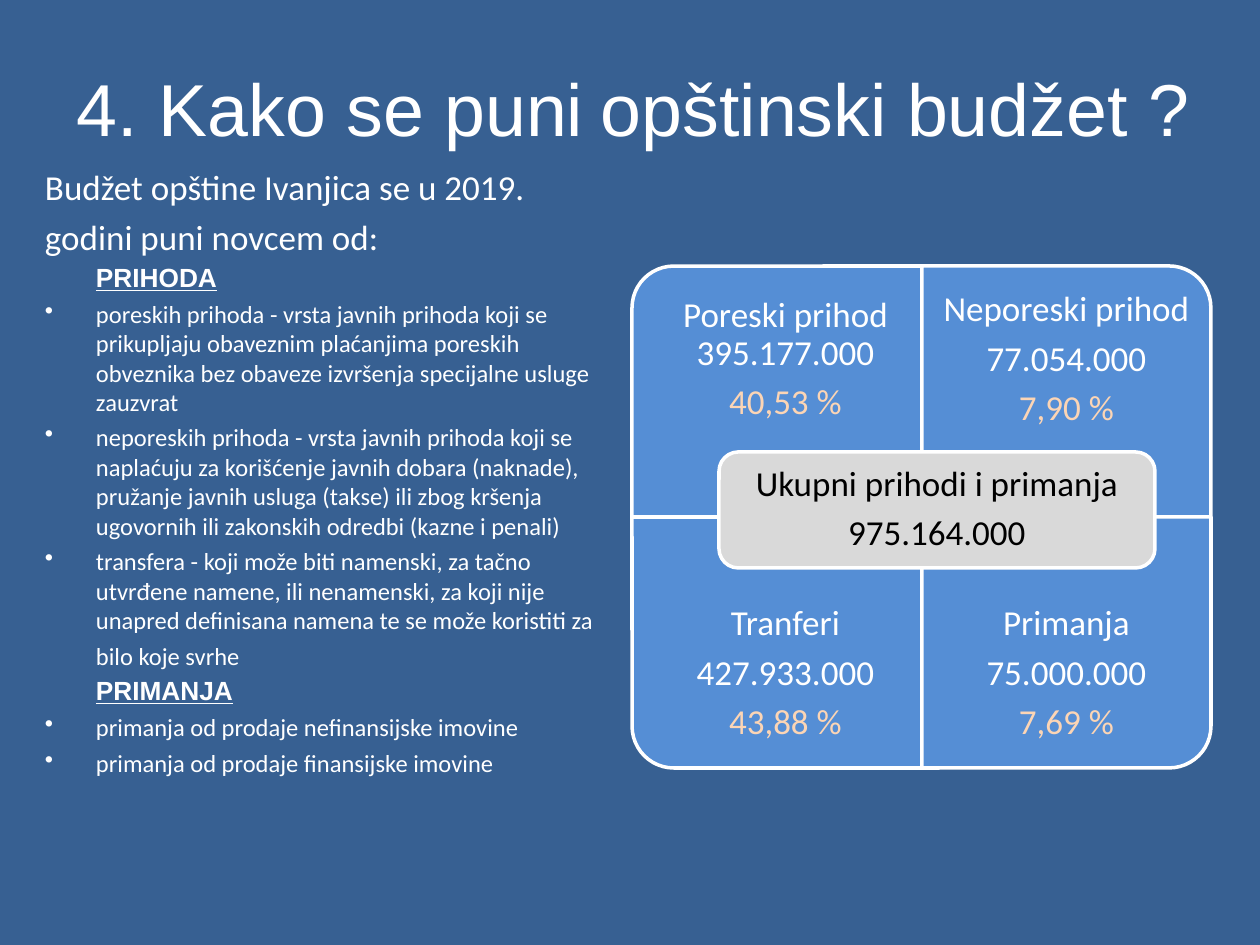
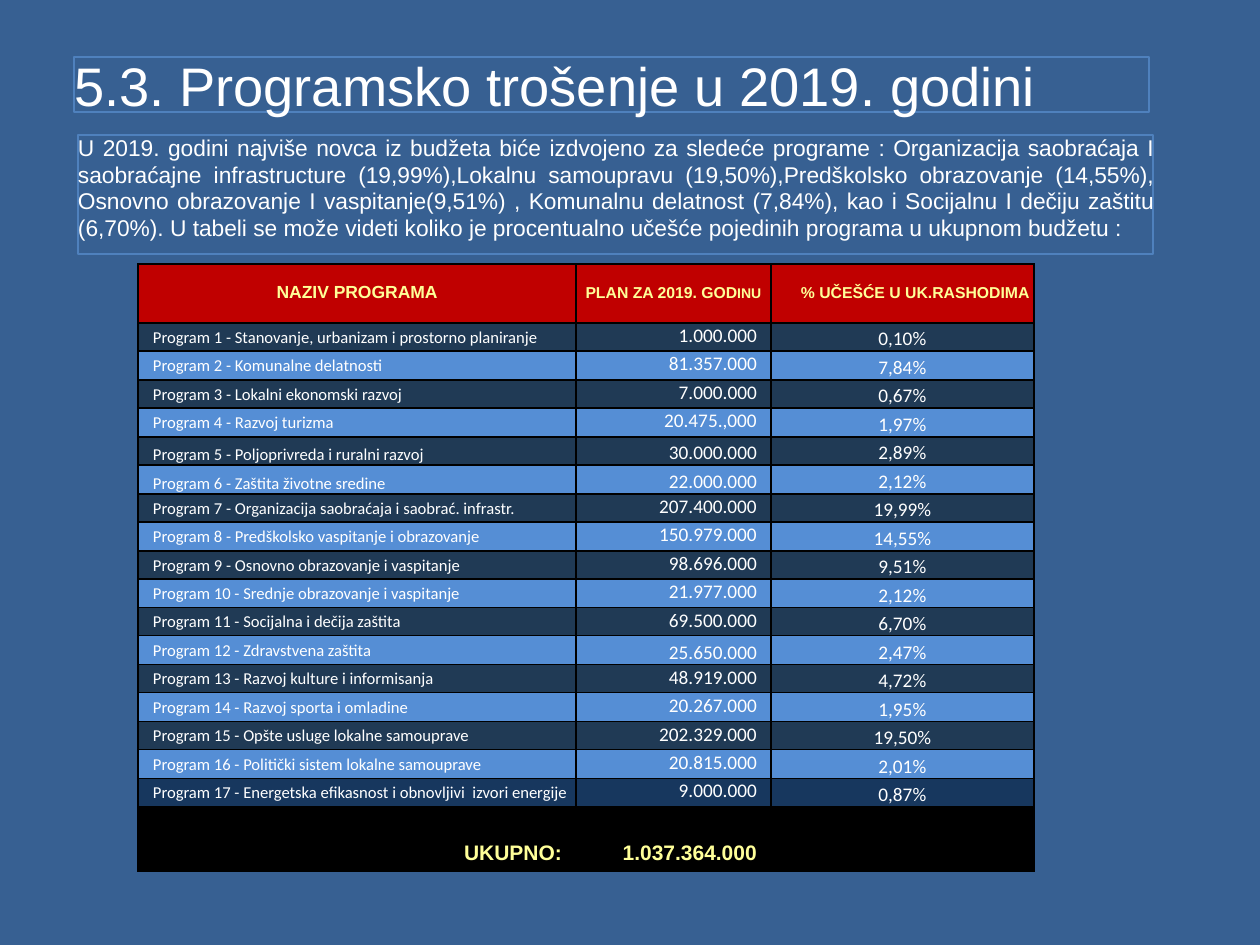
from dataclasses import dataclass, replace

from lxml.etree import SubElement
from pptx import Presentation
from pptx.dml.color import RGBColor as RGB
from pptx.enum.shapes import MSO_SHAPE as SHAPE
from pptx.enum.text import MSO_ANCHOR as ANCHOR, PP_ALIGN as ALIGN
from pptx.oxml.ns import qn
from pptx.util import Emu, Pt

PX_PER_INCH = 126


def px(n):
    return Emu(round(n * 914400 / PX_PER_INCH))


# ---- Theme: colours and type styles ----
@dataclass(frozen=True)
class Style:
    size: float
    color: str = "FFFFFF"
    font: str = "Calibri"
    bold: bool = False
    underline: bool = False
    line: object = None      # Pt value, or a share of single spacing
    after: float = 0
    align: object = ALIGN.LEFT
    left: int = 0
    hang: int = 0
    bullet: bool = False


class Theme:
    BACK, FRAME = "376092", "4F81BD"
    BLUE, DARK, NAVY = "558ED5", "203A55", "17375E"
    WHITE, BLACK, GREY = "FFFFFF", "000000", "D9D9D9"
    RED, YELLOW, PEACH = "C00000", "FFFF99", "FCD5B5"

    TITLE = Style(42, font="Arial", line=Pt(46.9), after=3.5)
    TITLE_SMALL = Style(31, font="Arial", line=Pt(34.6))
    LEAD = Style(20, line=Pt(28.6), after=3.5)
    HEADING = Style(15, font="Arial", bold=True, underline=True,
                    line=Pt(16.7), after=3.5, left=51)
    BULLET = Style(14, line=Pt(16.8), after=3.5, left=51, hang=51, bullet=True)
    BULLET_LOOSE = replace(BULLET, line=Pt(17.1))
    BULLET_TAIL = replace(BULLET_LOOSE, hang=0, bullet=False)
    INTRO = Style(13, font="Arial", line=Pt(15.1), align=ALIGN.JUSTIFY)
    FIGURE = Style(20, line=0.9, after=6.6, align=ALIGN.CENTER)
    SHARE = replace(FIGURE, color=PEACH)
    TOTAL = replace(FIGURE, color=BLACK)

    HEAD = Style(10, YELLOW, "Arial", True, line=Pt(9.5), align=ALIGN.CENTER)
    HEAD_SMALL = replace(HEAD, size=9)
    HEAD_TINY = replace(HEAD, size=8)
    NAME = Style(9.5, line=Pt(12.2))
    AMOUNT = Style(11, line=Pt(12.2), align=ALIGN.RIGHT)
    PERCENT = Style(11, align=ALIGN.CENTER)
    SUM = Style(12, YELLOW, "Arial", True, line=Pt(13.4), align=ALIGN.RIGHT)


T = Theme


# ---- Text ----
def add_run(p, text, style):
    r = p.add_run()
    r.text = text
    f = r.font
    f.size, f.name = Pt(style.size), style.font
    f.bold, f.underline = style.bold, style.underline
    f.color.rgb = RGB.from_string(style.color)


def format_para(p, style):
    p.alignment = style.align
    p.line_spacing = style.line
    p.space_after = Pt(style.after)
    pPr = p._p.get_or_add_pPr()
    pPr.set("marL", str(px(style.left)))
    pPr.set("indent", str(-px(style.hang)))
    if style.bullet:
        SubElement(pPr, qn("a:buChar")).set("char", "•")


def write(tf, paras):
    """Fill a text frame; each paragraph is a list of (text, style) runs."""
    for i, runs in enumerate(paras):
        p = tf.paragraphs[0] if i == 0 else tf.add_paragraph()
        format_para(p, runs[0][1])
        for text, style in runs:
            add_run(p, text, style)


def set_frame(tf, inset=0, anchor=ANCHOR.TOP, wrap=True):
    tf.word_wrap = wrap
    tf.vertical_anchor = anchor
    tf.margin_left = tf.margin_right = px(inset)
    tf.margin_top = tf.margin_bottom = px(inset)


# ---- Shapes ----
def add_block(slide, kind, box, fill, line=None, weight=2):
    sp = slide.shapes.add_shape(kind, *map(px, box))
    sp.shadow.inherit = False
    sp.fill.solid()
    sp.fill.fore_color.rgb = RGB.from_string(fill)
    if line:
        sp.line.color.rgb = RGB.from_string(line)
        sp.line.width = Pt(weight)
    else:
        sp.line.fill.background()
    return sp


def add_panel(slide, box, paras, line=None, wrap=True):
    sp = add_block(slide, SHAPE.RECTANGLE, box, T.BACK, line, 0.75)
    set_frame(sp.text_frame, wrap=wrap)
    write(sp.text_frame, paras)


def add_quadrant(slide, x, y, w, h, turn, text_y, lines):
    """A box with one round corner, turned so that the corner faces out."""
    fw, fh = (h, w) if turn % 180 else (w, h)
    frame = (x + (w - fw) / 2, y + (h - fh) / 2, fw, fh)
    sp = add_block(slide, SHAPE.ROUND_1_RECTANGLE, frame, T.BLUE, T.WHITE)
    sp.rotation = turn
    tb = slide.shapes.add_textbox(px(x), px(text_y), px(w), px(188))
    set_frame(tb.text_frame, 20, ANCHOR.MIDDLE)
    *figures, share = lines
    write(tb.text_frame, [[(t, T.FIGURE)] for t in figures] + [[(share, T.SHARE)]])


# ---- Table ----
def fill_cell(cell, fill, runs=(), anchor=ANCHOR.MIDDLE, left=0, right=0):
    tcPr = cell._tc.get_or_add_tcPr()
    for side in ("lnL", "lnR", "lnT", "lnB"):
        ln = SubElement(tcPr, qn(f"a:{side}"), w=str(Pt(1)))
        SubElement(SubElement(ln, qn("a:solidFill")), qn("a:srgbClr"), val=T.BLACK)
    cell.fill.solid()
    cell.fill.fore_color.rgb = RGB.from_string(fill)
    cell.vertical_anchor = anchor
    cell.margin_left, cell.margin_right = px(left), px(right)
    cell.margin_top = cell.margin_bottom = 0
    if runs:
        write(cell.text_frame, [runs])
    else:
        SubElement(cell.text_frame.paragraphs[0]._p, qn("a:endParaRPr"), sz="800")


def add_grid(slide, x, y, widths, heights):
    tbl = slide.shapes.add_table(len(heights), len(widths), px(x), px(y),
                                 px(sum(widths)), px(sum(heights))).table
    tbl.first_row = tbl.horz_banding = False
    for col, w in zip(tbl.columns, widths):
        col.width = px(w)
    for row, h in zip(tbl.rows, heights):
        row.height = px(h)
    return tbl


# ---- Content ----
SOURCES = [
    [("4. Kako se puni", replace(T.TITLE, left=32))],
    [("Budžet opštine Ivanjica se u 2019. godini puni novcem od:", T.LEAD)],
    [("PRIHODA", T.HEADING)],
    [("poreskih prihoda - vrsta javnih prihoda koji se prikupljaju obaveznim "
      "plaćanjima poreskih obveznika bez obaveze izvršenja specijalne usluge "
      "zauzvrat", T.BULLET)],
    [("neporeskih prihoda - vrsta javnih prihoda koji se naplaćuju za korišćenje "
      "javnih dobara (naknade), pružanje javnih usluga (takse) ili zbog kršenja "
      "ugovornih ili zakonskih odredbi (kazne i penali)", T.BULLET)],
    [("transfera - koji može biti namenski, za tačno utvrđene namene, ili "
      "nenamenski, za koji nije unapred definisana namena te se može koristiti za",
      T.BULLET)],
    [("bilo koje svrhe", T.BULLET_TAIL)],
    [("PRIMANJA", T.HEADING)],
    [("primanja od prodaje nefinansijske imovine", T.BULLET_LOOSE)],
    [("primanja od prodaje finansijske imovine", T.BULLET_LOOSE)],
]

# Turn and lines of each quadrant, row by row
QUADRANTS = [
    (270, ["Poreski prihod 395.177.000", "40,53 %"]),
    (0, ["Neporeski prihod", "77.054.000", "7,90 %"]),
    (180, ["Tranferi", "427.933.000", "43,88 %"]),
    (90, ["Primanja", "75.000.000", "7,69 %"]),
]

INTRO = (
    "U 2019. godini najviše novca iz budžeta biće izdvojeno za sledeće programe : "
    "Organizacija saobraćaja I saobraćajne infrastructure (19,99%),Lokalnu "
    "samoupravu (19,50%),Predškolsko obrazovanje (14,55%), Osnovno obrazovanje I "
    "vaspitanje(9,51%) , Komunalnu delatnost (7,84%), kao i Socijalnu I dečiju "
    "zaštitu (6,70%). U tabeli se može videti koliko je procentualno učešće "
    "pojedinih programa u ukupnom budžetu :")

PROGRAMS = [
    ("Stanovanje, urbanizam i prostorno planiranje", "1.000.000", "0,10%"),
    ("Komunalne delatnosti", "81.357.000", "7,84%"),
    ("Lokalni ekonomski razvoj", "7.000.000", "0,67%"),
    ("Razvoj turizma", "20.475.,000", "1,97%"),
    ("Poljoprivreda i ruralni razvoj", "30.000.000", "2,89%"),
    ("Zaštita životne sredine", "22.000.000", "2,12%"),
    ("Organizacija saobraćaja i saobrać. infrastr.", "207.400.000", "19,99%"),
    ("Predškolsko vaspitanje i obrazovanje", "150.979.000", "14,55%"),
    ("Osnovno obrazovanje i vaspitanje", "98.696.000", "9,51%"),
    ("Srednje obrazovanje i vaspitanje", "21.977.000", "2,12%"),
    ("Socijalna i dečija zaštita", "69.500.000", "6,70%"),
    ("Zdravstvena zaštita", "25.650.000", "2,47%"),
    ("Razvoj kulture i informisanja", "48.919.000", "4,72%"),
    ("Razvoj sporta i omladine", "20.267.000", "1,95%"),
    ("Opšte usluge lokalne samouprave", "202.329.000", "19,50%"),
    ("Politički sistem lokalne samouprave", "20.815.000", "2,01%"),
    ("Energetska efikasnost i obnovljivi  izvori energije", "9.000.000", "0,87%"),
]
LOW_NAMES = {5, 6}          # programs whose name sits at the cell bottom
LOW_AMOUNTS = {5, 6, 12}


# ---- Slides ----
def add_slide(prs):
    slide = prs.slides.add_slide(prs.slide_layouts[6])
    slide.background.fill.solid()
    slide.background.fill.fore_color.rgb = RGB.from_string(T.BACK)
    return slide


def build_revenue(prs):
    slide = add_slide(prs)
    add_panel(slide, (45, 69, 559, 771), SOURCES)
    add_panel(slide, (601, 69, 552, 88), [[("opštinski budžet ?", T.TITLE)]],
              wrap=False)

    # Four revenue quadrants
    columns, rows = [(632, 307), (922, 289)], [(266, 266), (517, 580)]
    for i, (turn, lines) in enumerate(QUADRANTS):
        (x, w), (y, text_y) = columns[i % 2], rows[i // 2]
        add_quadrant(slide, x, y, w, 251, turn, text_y, lines)

    # Total in the middle
    total = add_block(slide, SHAPE.ROUNDED_RECTANGLE, (719, 452, 436, 116),
                      T.GREY, T.WHITE)
    set_frame(total.text_frame, 10, ANCHOR.MIDDLE)
    write(total.text_frame, [[("Ukupni prihodi i primanja", T.TOTAL)],
                             [("975.164.000", T.TOTAL)]])


def build_programs(prs):
    slide = add_slide(prs)
    add_panel(slide, (74, 57, 1075, 55),
              [[("5.3. Programsko trošenje u 2019. godini", T.TITLE_SMALL)]],
              T.FRAME, wrap=False)
    add_panel(slide, (78, 135, 1075, 119), [[(INTRO, T.INTRO)]], T.FRAME)

    count = len(PROGRAMS)
    heights = [59] + [28 + i % 2 for i in range(count)] + [28, 37]
    tbl = add_grid(slide, 138, 264, [438, 195, 263], heights)

    # Header
    fill_cell(tbl.cell(0, 0), T.RED, [("NAZIV PROGRAMA", T.HEAD)])
    fill_cell(tbl.cell(0, 1), T.RED, [("PLAN ZA 2019. GOD", T.HEAD_SMALL),
                                      ("INU", T.HEAD_TINY)])
    fill_cell(tbl.cell(0, 2), T.RED,
              [("% UČEŠĆE U UK.RASHODIMA",
                replace(T.HEAD_SMALL, align=ALIGN.LEFT, left=30))])

    # Programs
    for n, (name, amount, share) in enumerate(PROGRAMS, 1):
        fill = T.NAVY if n == count else T.DARK if n % 2 else T.BLUE
        fill_cell(tbl.cell(n, 0), fill, [(f"Program {n} - {name}", T.NAME)],
                  ANCHOR.BOTTOM if n in LOW_NAMES else ANCHOR.MIDDLE, left=15)
        fill_cell(tbl.cell(n, 1), fill, [(amount, T.AMOUNT)],
                  ANCHOR.BOTTOM if n in LOW_AMOUNTS else ANCHOR.MIDDLE, right=14)
        fill_cell(tbl.cell(n, 2), fill, [(share, T.PERCENT)], ANCHOR.BOTTOM, 1, 1)

    # Spacer row and total row
    for col, text in enumerate(("UKUPNO:", "1.037.364.000", "")):
        fill_cell(tbl.cell(count + 1, col), T.BLACK)
        fill_cell(tbl.cell(count + 2, col), T.BLACK,
                  [(text, T.SUM)] if text else (), right=14)


def main():
    prs = Presentation()
    prs.slide_width, prs.slide_height = px(1260), px(945)
    build_revenue(prs)
    build_programs(prs)
    prs.save("out.pptx")


if __name__ == "__main__":
    main()
